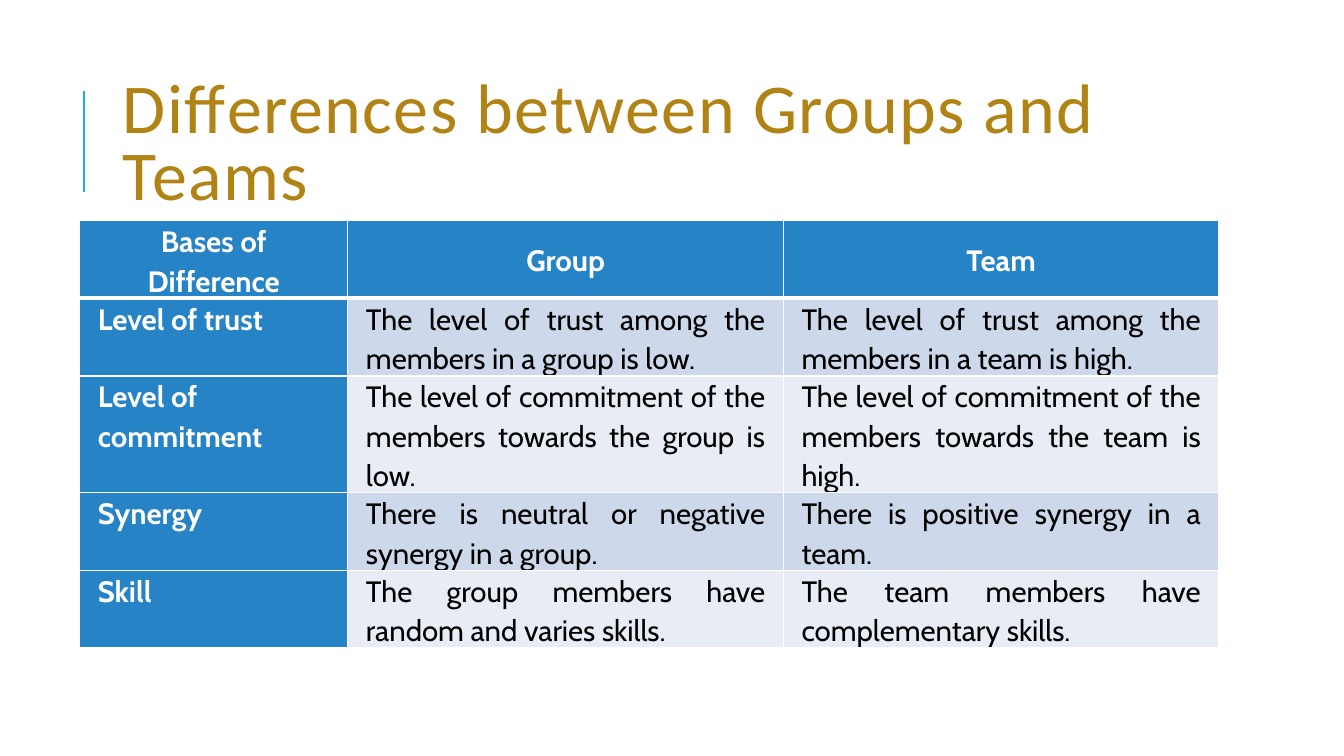
from lxml.etree import SubElement
from pptx import Presentation
from pptx.dml.color import RGBColor
from pptx.enum.shapes import MSO_CONNECTOR as Connector
from pptx.enum.text import MSO_ANCHOR as Anchor, PP_ALIGN as Align
from pptx.oxml.ns import qn
from pptx.util import Inches, Pt

WHITE = RGBColor(0xFF, 0xFF, 0xFF)
BLACK = RGBColor(0x00, 0x00, 0x00)
GOLD = RGBColor(0xB0, 0x83, 0x14)
CYAN = RGBColor(0x1C, 0xAD, 0xE4)
BLUE = RGBColor(0x26, 0x83, 0xC6)
BANDS = [RGBColor(0xCD, 0xD9, 0xEA), RGBColor(0xE8, 0xED, 0xF5)]

COLUMN_WIDTHS = [2.66, 4.32, 4.32]
ROW_HEIGHTS = [0.77, 0.77, 1.16, 0.77, 0.77]
COMPARISON = [
    ("Bases of Difference", "Group", "Team"),
    ("Level of trust",
     "The level of trust among the members in a group is low.",
     "The level of trust among the members in a team is high."),
    ("Level of commitment",
     "The level of commitment of the members towards the group is low.",
     "The level of commitment of the members towards the team is high."),
    ("Synergy",
     "There is neutral or negative synergy in a group.",
     "There is positive synergy in a team."),
    ("Skill",
     "The group members have random and varies skills.",
     "The team members have complementary skills."),
]


def write(frame, text, *, font, size, color, bold=False, align=Align.LEFT,
          line_spacing=1.0, space_after=0, tracking=0):
    frame.word_wrap = True
    paragraph = frame.paragraphs[0]
    paragraph.alignment = align
    paragraph.line_spacing = line_spacing
    paragraph.space_before = Pt(0)
    paragraph.space_after = Pt(space_after)
    run = paragraph.add_run()
    run.text = text
    run.font.name = font
    run.font.size = Pt(size)
    run.font.bold = bold
    run.font.color.rgb = color
    if tracking:
        run.font._element.set("spc", str(tracking * 100))


class ComparisonSlide:
    title_style = dict(font="Calibri", size=50, color=GOLD,
                       line_spacing=0.8, tracking=1)
    cell_style = dict(font="Cabin", size=21, line_spacing=1.1, space_after=2)

    def __init__(self, presentation):
        self.slide = presentation.slides.add_slide(presentation.slide_layouts[6])

    def accent_line(self, x, top, bottom):
        accent = self.slide.shapes.add_connector(
            Connector.STRAIGHT, Inches(x), Inches(bottom), Inches(x), Inches(top))
        accent.line.color.rgb = CYAN
        accent.line.width = Pt(1.5)
        SubElement(accent._element.spPr, qn("a:effectLst"))

    def title(self, text, left, top, width, height):
        heading = self.slide.shapes.add_textbox(
            Inches(left), Inches(top), Inches(width), Inches(height))
        heading.text_frame.vertical_anchor = Anchor.MIDDLE
        write(heading.text_frame, text, **self.title_style)

    def table(self, rows, left, top):
        grid = self.slide.shapes.add_table(
            len(rows), len(COLUMN_WIDTHS), Inches(left), Inches(top),
            Inches(sum(COLUMN_WIDTHS)), Inches(sum(ROW_HEIGHTS))).table
        for column, width in zip(grid.columns, COLUMN_WIDTHS):
            column.width = Inches(width)
        for row, height in zip(grid.rows, ROW_HEIGHTS):
            row.height = Inches(height)
        for r, texts in enumerate(rows):
            for c, text in enumerate(texts):
                self.cell(grid.cell(r, c), text, r, c)

    def cell(self, cell, text, row, column):
        is_header = row == 0
        is_label = is_header or column == 0
        cell.margin_left = cell.margin_right = Inches(0.18)
        cell.margin_top = cell.margin_bottom = 0
        cell.vertical_anchor = Anchor.MIDDLE if is_header else Anchor.TOP
        self.borders(cell, top=3 if row == 1 else 1, bottom=3 if is_header else 1)
        cell.fill.solid()
        cell.fill.fore_color.rgb = BLUE if is_label else BANDS[(row - 1) % 2]
        if is_header:
            align = Align.CENTER
        else:
            align = Align.LEFT if is_label else Align.JUSTIFY
        write(cell.text_frame, text, bold=is_label, align=align,
              color=WHITE if is_label else BLACK, **self.cell_style)

    def borders(self, cell, top, bottom):
        properties = cell._tc.get_or_add_tcPr()
        for side, width in (("L", 1), ("R", 1), ("T", top), ("B", bottom)):
            border = SubElement(properties, qn(f"a:ln{side}"), w=str(Pt(width)))
            fill = SubElement(border, qn("a:solidFill"))
            SubElement(fill, qn("a:srgbClr"), val=str(WHITE))


def main():
    presentation = Presentation()
    presentation.slide_width = Inches(13.33)
    presentation.slide_height = Inches(7.5)
    page = ComparisonSlide(presentation)
    page.accent_line(0.83, 0.9, 1.9)
    page.title("Differences between Groups and Teams", 1.12, 0.64, 10.63, 1.64)
    page.table(COMPARISON, 0.79, 2.19)
    presentation.save("out.pptx")


if __name__ == "__main__":
    main()
